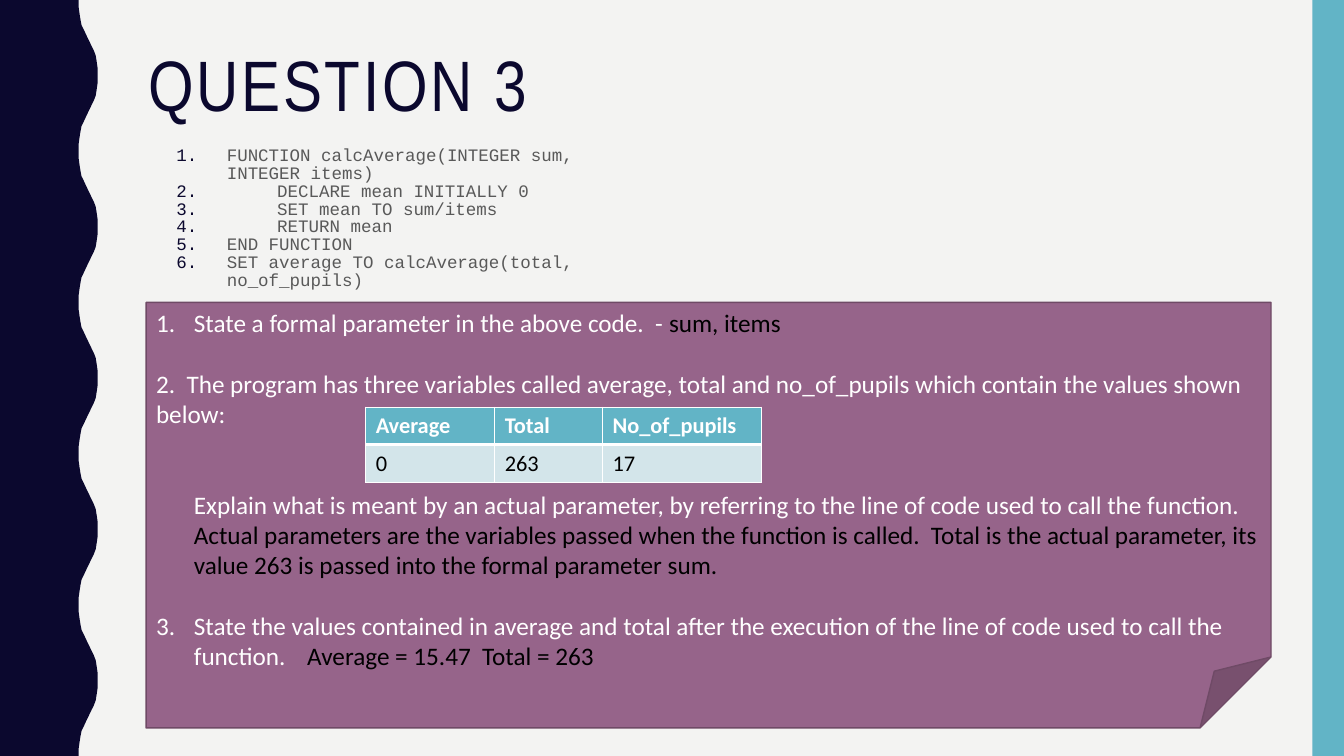
from pptx import Presentation
from pptx.util import Pt
from pptx.dml.color import RGBColor
from pptx.enum.shapes import MSO_SHAPE
from pptx.enum.text import MSO_ANCHOR, MSO_AUTO_SIZE, PP_ALIGN
from pptx.oxml import parse_xml
from pptx.oxml.ns import nsdecls

LEFT = PP_ALIGN.LEFT
TOP, MIDDLE = MSO_ANCHOR.TOP, MSO_ANCHOR.MIDDLE
NO_FIT = MSO_AUTO_SIZE.NONE
RECTANGLE, FOLDED_CORNER = MSO_SHAPE.RECTANGLE, MSO_SHAPE.FOLDED_CORNER
NAVY, TEAL, WHITE, BLACK = "0B082E", "62B4C6", "FFFFFF", "000000"


def paint(color_format, color):
    color_format.rgb = RGBColor.from_string(color)


def number(paragraph, indent, color, start=1):
    props = paragraph._p.get_or_add_pPr()
    props.set("marL", str(Pt(indent)))
    props.set("indent", str(-Pt(indent)))
    ns = nsdecls("a")
    props.append(parse_xml(f'<a:buClr {ns}><a:srgbClr val="{color}"/></a:buClr>'))
    props.append(parse_xml(f'<a:buFont {ns} typeface="+mj-lt"/>'))
    props.append(parse_xml(f'<a:buAutoNum {ns} type="arabicPeriod" startAt="{start}"/>'))


prs = Presentation()
prs.slide_width, prs.slide_height = Pt(960), Pt(540)
slide = prs.slides.add_slide(prs.slide_layouts[1])
slide.background.fill.solid()
paint(slide.background.fill.fore_color, "F3F3F2")

half_wave = [(56.2, 0), (56.2, 5), (56.9, 10), (57.6, 14.4), (58.3, 18),
             (59.8, 21), (61.2, 24), (62.6, 27), (64.1, 30), (65.5, 33),
             (67, 36), (68.4, 39.6), (69.1, 44), (69.8, 49), (69.8, 54)]
wave = half_wave + [(x, 108 - y) for x, y in half_wave[-2::-1]]
edge = [(Pt(x), Pt(y + 108 * i)) for i in range(5) for x, y in wave]
builder = slide.shapes.build_freeform(0, 0)
builder.add_line_segments(edge + [(0, Pt(540))], close=True)
wavy_band = builder.convert_to_shape()
side_bar = slide.shapes.add_shape(RECTANGLE, Pt(937.5), 0, Pt(22.5), Pt(540))
for band, color in ((wavy_band, NAVY), (side_bar, TEAL)):
    band.shadow.inherit = False
    band.fill.solid()
    paint(band.fill.fore_color, color)
    band.line.fill.background()

title = slide.shapes.title
title.left, title.top, title.width, title.height = Pt(98.6), Pt(30.2), Pt(801.4), Pt(66.2)
title.text_frame.text = "QUESTION 3"
title.text_frame.auto_size = NO_FIT
title.text_frame.vertical_anchor = MIDDLE
heading = title.text_frame.paragraphs[0]
heading.alignment = LEFT
heading.line_spacing = 0.9
heading.font.size = Pt(51)
heading.font.name = "Arial Narrow"
paint(heading.font.color, NAVY)
heading.runs[0]._r.get_or_add_rPr().set("spc", "200")

code = slide.placeholders[1]
code.left, code.top, code.width, code.height = Pt(118.8), Pt(101.5), Pt(337.7), Pt(114.5)
code.text_frame.text = "\n".join([
    "FUNCTION calcAverage(INTEGER sum, INTEGER items)",
    "\tDECLARE mean INITIALLY 0",
    "\tSET mean TO sum/items",
    "\tRETURN mean",
    "END FUNCTION",
    "SET average TO calcAverage(total, no_of_pupils)",
])
code.text_frame.auto_size = NO_FIT
for code_line in code.text_frame.paragraphs:
    code_line.line_spacing = 0.85
    code_line.space_before = Pt(0)
    number(code_line, 36, NAVY)
    code_line.font.size = Pt(12.5)
    code_line.font.name = "Courier New"
    paint(code_line.font.color, "595959")

note = slide.shapes.add_shape(FOLDED_CORNER, Pt(104.4), Pt(216), Pt(803.5), Pt(304))
note.shadow.inherit = False
note.fill.solid()
paint(note.fill.fore_color, "96648A")
paint(note.line.color, "6F4A66")
note.line.width = Pt(1)
note.text_frame.word_wrap = True
note.text_frame.vertical_anchor = TOP

questions = [
    (0, 1, 27, [("State a formal parameter in the above code.  - ", WHITE),
                ("sum, items", BLACK)]),
    (1, None, 0, [("2.  The program has three variables called average, total and "
                   "no_of_pupils which contain the values shown below:", WHITE)]),
    (2, None, 27, [("Explain what is meant by an actual parameter, by referring to "
                    "the line of code used to call the function.", WHITE)]),
    (0, None, 27, [("Actual parameters are the variables passed when the function is "
                    "called.  Total is the actual parameter, its value 263 is passed "
                    "into the formal parameter sum.", BLACK)]),
    (1, 3, 27, [("State the values contained in average and total after the execution "
                 "of the line of code used to call the function. \t", WHITE),
                ("Average = 15.47  Total = 263", BLACK)]),
]
for i, (lines_before, start, indent, parts) in enumerate(questions):
    frame = note.text_frame
    question = frame.add_paragraph() if i else frame.paragraphs[0]
    question.alignment = LEFT
    question.space_before = Pt(21.7 * lines_before)
    if start:
        number(question, indent, WHITE, start)
    else:
        question._p.get_or_add_pPr().set("marL", str(Pt(indent)))
    question.font.size = Pt(18)
    question.font.name = "Calibri"
    for text, color in parts:
        run = question.add_run()
        run.text = text
        paint(run.font.color, color)

values = [["Average", "Total", "No_of_pupils"], ["0", "263", "17"]]
table = slide.shapes.add_table(2, 3, Pt(261.2), Pt(290.8), Pt(283), Pt(52.4)).table
for column, width in zip(table.columns, (92.2, 77, 113.8)):
    column.width = Pt(width)
for r, row in enumerate(values):
    for c, value in enumerate(row):
        cell = table.cell(r, c)
        cell.text = value
        entry = cell.text_frame.paragraphs[0]
        entry.font.size = Pt(16)
        entry.font.name = "Calibri"
        entry.font.bold = r == 0
        paint(entry.font.color, BLACK if r else WHITE)
        borders = {"lnL": 1, "lnR": 1, "lnT": 1 if r == 0 else 3, "lnB": 3 if r == 0 else 1}
        for side, width in borders.items():
            cell._tc.get_or_add_tcPr().append(parse_xml(
                f'<a:{side} {nsdecls("a")} w="{Pt(width)}"><a:solidFill>'
                f'<a:srgbClr val="{WHITE}"/></a:solidFill></a:{side}>'))
        cell.fill.solid()
        paint(cell.fill.fore_color, "D3E5EA" if r else TEAL)

prs.save("out.pptx")
